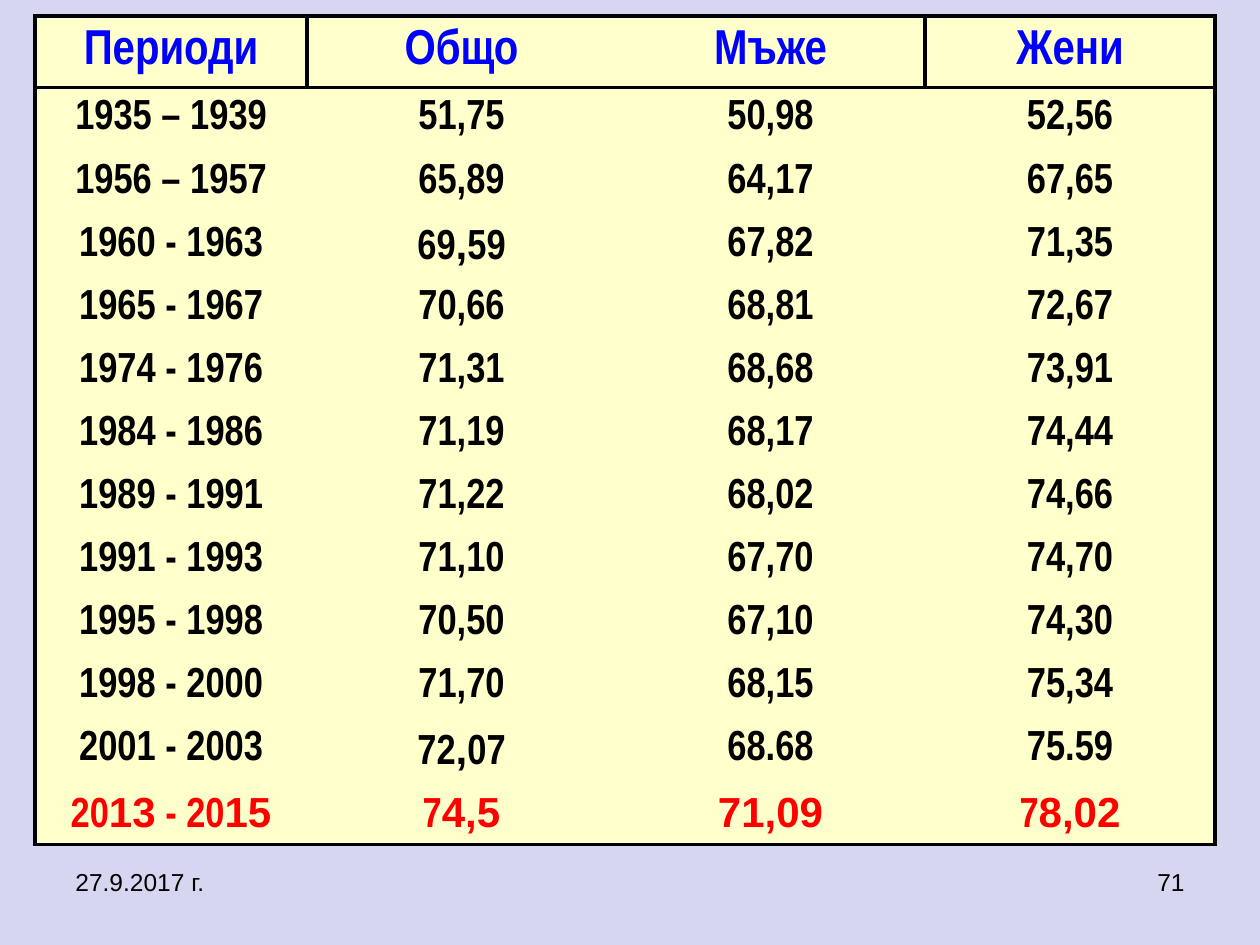
from dataclasses import dataclass

from lxml import etree
from pptx import Presentation
from pptx import util as u
from pptx.dml.color import RGBColor
from pptx.enum import text
from pptx.oxml import ns

PIXELS_PER_INCH = 126


@dataclass(frozen=True)
class Theme:
    background: str = "D6D6F1"
    cell: str = "FFFFCC"
    ink: str = "000000"
    header: str = "0000FF"
    latest: str = "FF0000"
    narrow: str = "Arial Narrow"
    wide: str = "Arial"
    header_size: int = 28
    body_size: int = 24
    footer_size: int = 14
    border: int = 2


THEME = Theme()

COLUMN_WIDTHS = [272, 309, 309, 290]
HEADER_HEIGHT = 68
ROW_HEIGHT = 59

# "|" switches between the narrow and the wide font
LIFE_EXPECTANCY = [
    ("Периоди", "Общо", "Мъже", "Жени"),
    ("1935 – 1939", "51,75", "50,98", "52,56"),
    ("1956 – 1957", "65,89", "64,17", "67,65"),
    ("1960 - 1963", "69|,|59", "67,82", "71,35"),
    ("1965 - 1967", "70,66", "68,81", "72,67"),
    ("1974 - 1976", "71,31", "68,68", "73,91"),
    ("1984 - 1986", "71,19", "68,17", "74,44"),
    ("1989 - 1991", "71,22", "68,02", "74,66"),
    ("1991 - 1993", "71,10", "67,70", "74,70"),
    ("1995 - 1998", "70,50", "67,10", "74,30"),
    ("1998 - 2000", "71,70", "68,15", "75,34"),
    ("2001 - 2003", "72|,|07", "68.68", "75.59"),
    ("20|13| - 20|15", "7|4,5", "|71,09", "7|8,02"),
]


def px(value):
    return u.Emu(round(value * u.Inches(1) / PIXELS_PER_INCH))


def add_run(paragraph, content, font, size, color, bold=False):
    run = paragraph.add_run()
    run.text = content
    run.font.name = font
    run.font.size = u.Pt(size)
    run.font.bold = bold
    run.font.color.rgb = RGBColor.from_string(color)


def set_borders(cell, visible_sides):
    properties = cell._tc.get_or_add_tcPr()
    for side in "LRTB":
        line = etree.SubElement(properties, ns.qn(f"a:ln{side}"))
        if side in visible_sides:
            line.set("w", str(u.Pt(THEME.border)))
            fill = etree.SubElement(line, ns.qn("a:solidFill"))
            etree.SubElement(fill, ns.qn("a:srgbClr"), val=THEME.ink)
        else:
            line.set("w", "0")
            etree.SubElement(line, ns.qn("a:noFill"))


def border_sides(row, column, last_row, last_column):
    is_header = row == 0
    rules = {
        "L": column == 0 or is_header and column in (1, last_column),
        "R": column == last_column or is_header and column in (0, last_column - 1),
        "T": row <= 1,
        "B": is_header or row == last_row,
    }
    return {side for side, visible in rules.items() if visible}


def fill_cell(cell, content, size, color, sides):
    set_borders(cell, sides)
    cell.fill.solid()
    cell.fill.fore_color.rgb = RGBColor.from_string(THEME.cell)
    cell.vertical_anchor = text.MSO_ANCHOR.MIDDLE
    paragraph = cell.text_frame.paragraphs[0]
    paragraph.alignment = text.PP_ALIGN.CENTER
    for index, part in enumerate(content.split("|")):
        if part:
            font = THEME.wide if index % 2 else THEME.narrow
            add_run(paragraph, part, font, size, color, bold=True)


def add_life_table(slide, left, top):
    last_row = len(LIFE_EXPECTANCY) - 1
    last_column = len(COLUMN_WIDTHS) - 1
    height = HEADER_HEIGHT + last_row * ROW_HEIGHT
    table = slide.shapes.add_table(
        last_row + 1, last_column + 1,
        px(left), px(top), px(sum(COLUMN_WIDTHS)), px(height),
    ).table
    table.first_row = False
    table.horz_banding = False
    for column, width in zip(table.columns, COLUMN_WIDTHS):
        column.width = px(width)
    row_colors = {0: THEME.header, last_row: THEME.latest}
    for row, values in enumerate(LIFE_EXPECTANCY):
        table.rows[row].height = px(ROW_HEIGHT if row else HEADER_HEIGHT)
        size = THEME.body_size if row else THEME.header_size
        color = row_colors.get(row, THEME.ink)
        for column, content in enumerate(values):
            sides = border_sides(row, column, last_row, last_column)
            fill_cell(table.cell(row, column), content, size, color, sides)


def add_footer(slide, left, content, alignment):
    shape = slide.shapes.add_textbox(px(left), px(861), px(294), px(65))
    shape.text_frame.word_wrap = True
    paragraph = shape.text_frame.paragraphs[0]
    paragraph.alignment = alignment
    add_run(paragraph, content, THEME.wide, THEME.footer_size, THEME.ink)


def main():
    presentation = Presentation()
    presentation.slide_width = px(1260)
    presentation.slide_height = px(945)
    slide = presentation.slides.add_slide(presentation.slide_layouts[6])
    slide.background.fill.solid()
    slide.background.fill.fore_color.rgb = RGBColor.from_string(THEME.background)
    add_footer(slide, 903, "71", text.PP_ALIGN.RIGHT)
    add_life_table(slide, 35, 16)
    add_footer(slide, 63, "27.9.2017 г.", text.PP_ALIGN.LEFT)
    presentation.save("out.pptx")


if __name__ == "__main__":
    main()
